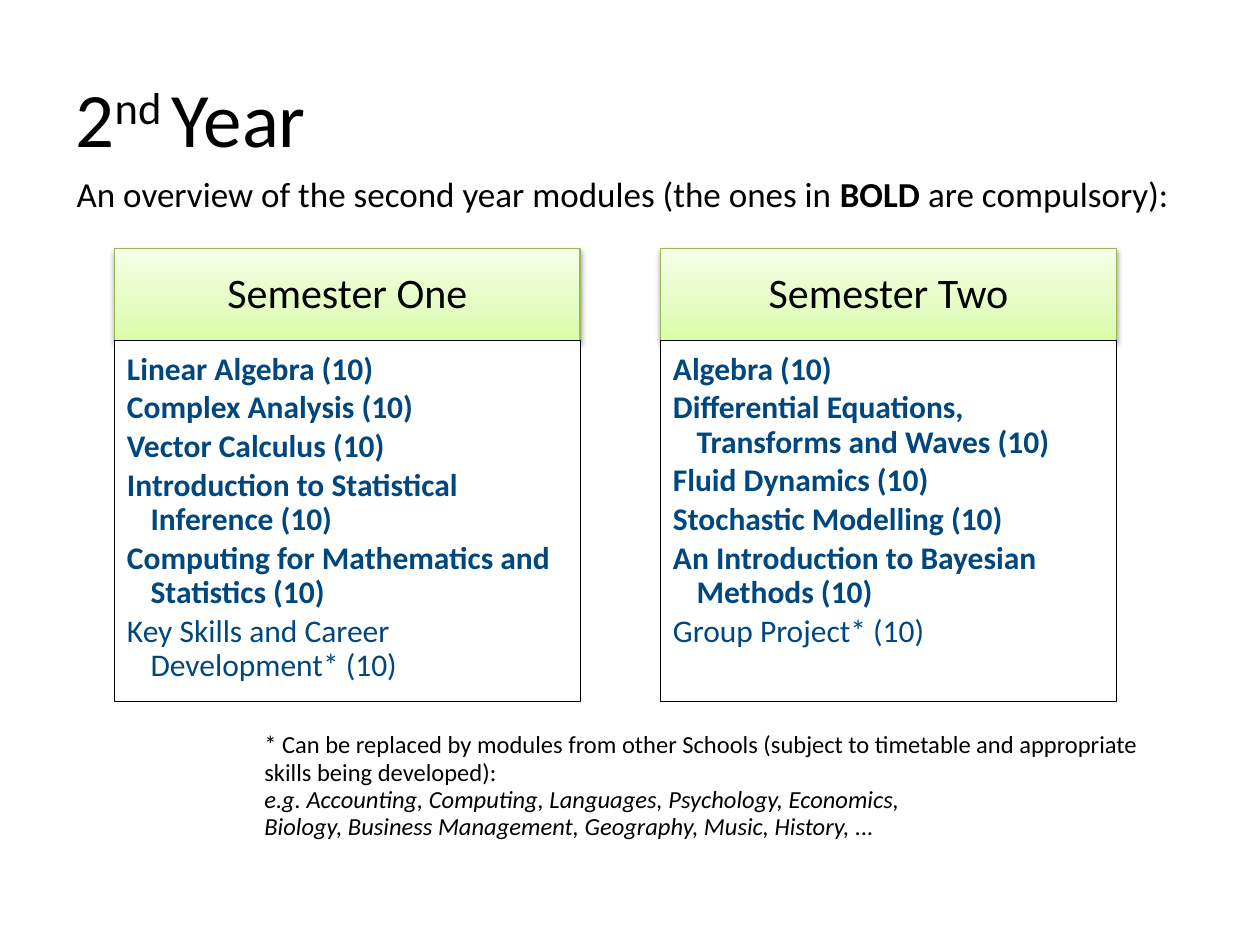
import copy

import pptx
import pptx.dml.color
import pptx.enum.shapes
import pptx.enum.text
import pptx.oxml
import pptx.oxml.ns
import pptx.util

Pt = pptx.util.Pt
RGB = pptx.dml.color.RGBColor.from_string
ALIGN = pptx.enum.text.PP_ALIGN
ANCHOR = pptx.enum.text.MSO_ANCHOR
RECTANGLE = pptx.enum.shapes.MSO_SHAPE.RECTANGLE

THEME = {
    "font": "Calibri",
    "text": "000000", "module": "00477F", "paper": "FFFFFF",
    "header_line": "98B955",
    "header_stops": [(0, "DAFDA7"), (0.35, "E4FCC2"), (1, "F5FFE7")],
    "title_size": 44, "overview_size": 20, "header_size": 24,
    "module_size": 18, "note_size": 14,
}
SHADOW = (
    f'<a:outerShdw {pptx.oxml.ns.nsdecls("a")} blurRad="{Pt(3.1)}" dist="{Pt(1.6)}"'
    ' dir="5400000" rotWithShape="0"><a:srgbClr val="000000"><a:alpha val="38000"/>'
    "</a:srgbClr></a:outerShdw>"
)
SEMESTERS = [
    ("Semester One", 65.5, 266, [
        "Linear Algebra (10)",
        "Complex Analysis (10)",
        "Vector Calculus (10)",
        "Introduction to Statistical Inference (10)",
        "Computing for Mathematics and Statistics (10)",
        "Key Skills and Career Development* (10)",
    ]),
    ("Semester Two", 377.5, 260.5, [
        "Algebra (10)",
        "Differential Equations, Transforms and Waves (10)",
        "Fluid Dynamics (10)",
        "Stochastic Modelling (10)",
        "An Introduction to Bayesian Methods (10)",
        "Group Project* (10)",
    ]),
]
NOTE = [
    ("* Can be replaced by modules from other Schools (subject to timetable "
     "and appropriate skills being developed):", False),
    ("e.g. Accounting, Computing, Languages, Psychology, Economics,", True),
    ("Biology, Business Management, Geography, Music, History, ...", True),
]
HEADER_TOP, HEADER_HEIGHT, LIST_HEIGHT = 142, 52.5, 206


def add_run(paragraph, text, size, color=THEME["text"], **formats):
    run = paragraph.add_run()
    run.text = text
    run.font.color.rgb = RGB(color)
    for name, value in {"name": THEME["font"], "size": Pt(size), **formats}.items():
        setattr(run.font, name, value)
    return run


def format_frame(frame, anchor, insets):
    """Wrap the text, anchor it and set left, top, right and bottom insets."""
    frame.word_wrap = True
    frame.vertical_anchor = anchor
    for side, inset in zip(("left", "top", "right", "bottom"), insets):
        setattr(frame, f"margin_{side}", Pt(inset))


prs = pptx.Presentation()
prs.slide_width, prs.slide_height = Pt(720), Pt(540)
slide = prs.slides.add_slide(prs.slide_layouts[5])
shapes = slide.shapes

title = shapes.title
placement = {"left": 36, "top": 21.6, "width": 648, "height": 90}
for name, value in placement.items():
    setattr(title, name, Pt(value))
format_frame(title.text_frame, ANCHOR.MIDDLE, (7.2, 3.6, 7.2, 3.6))
year = title.text_frame.paragraphs[0]
year.alignment = ALIGN.LEFT
add_run(year, "2", THEME["title_size"])
ordinal = add_run(year, "nd ", THEME["title_size"])
ordinal._r.get_or_add_rPr().set("baseline", "30000")
add_run(year, "Year", THEME["title_size"])

overview = shapes.add_textbox(Pt(36.7), Pt(95), Pt(648), Pt(87)).text_frame
format_frame(overview, ANCHOR.TOP, (7.2, 3.6, 7.2, 3.6))
for text, bold in [
    ("An overview of the second year modules (the ones in", False),
    (" BOLD ", True),
    ("are compulsory):", False),
]:
    add_run(overview.paragraphs[0], text, THEME["overview_size"], bold=bold)

for semester, left, width, modules in SEMESTERS:
    header = shapes.add_shape(
        RECTANGLE, Pt(left), Pt(HEADER_TOP), Pt(width), Pt(HEADER_HEIGHT))
    header.fill.gradient()
    header.fill.gradient_angle = 90
    first_stop = header._element.spPr.find(".//" + pptx.oxml.ns.qn("a:gs"))
    first_stop.addnext(copy.deepcopy(first_stop))
    for stop, (position, color) in zip(header.fill.gradient_stops, THEME["header_stops"]):
        stop.position = position
        stop.color.rgb = RGB(color)
    header.line.color.rgb = RGB(THEME["header_line"])
    header.line.width = Pt(0.75)
    header.shadow.inherit = False
    effects = header._element.spPr.find(pptx.oxml.ns.qn("a:effectLst"))
    effects.append(pptx.oxml.parse_xml(SHADOW))
    format_frame(header.text_frame, ANCHOR.MIDDLE, (13.7, 8, 13.7, 8))
    heading = header.text_frame.paragraphs[0]
    heading.alignment = ALIGN.CENTER
    heading.line_spacing = 0.9
    add_run(heading, semester, THEME["header_size"])

    module_list = shapes.add_shape(
        RECTANGLE, Pt(left), Pt(HEADER_TOP + HEADER_HEIGHT), Pt(width), Pt(LIST_HEIGHT))
    module_list.fill.solid()
    module_list.fill.fore_color.rgb = RGB(THEME["paper"])
    module_list.line.color.rgb = RGB(THEME["text"])
    module_list.line.width = Pt(0.25)
    module_list.shadow.inherit = False
    frame = module_list.text_frame
    format_frame(frame, ANCHOR.TOP, (7.2, 7.2, 10, 11.5))
    for index, module in enumerate(modules):
        entry = frame.add_paragraph() if index else frame.paragraphs[0]
        properties = entry._p.get_or_add_pPr()
        properties.set("marL", str(Pt(13.5)))
        properties.set("indent", str(Pt(-13.5)))
        entry.alignment = ALIGN.LEFT
        entry.line_spacing = 0.9
        entry.space_after = Pt(2.7)
        add_run(entry, module, THEME["module_size"], THEME["module"],
                bold="*" not in module)

note = shapes.add_textbox(Pt(108), Pt(414.7), Pt(561.6), Pt(70.5)).text_frame
format_frame(note, ANCHOR.TOP, (7.2, 3.6, 7.2, 3.6))
for index, (text, italic) in enumerate(NOTE):
    line = note.add_paragraph() if index else note.paragraphs[0]
    line._p.get_or_add_pPr().set("marL", str(Pt(36)))
    line.line_spacing = 0.93
    add_run(line, text, THEME["note_size"], italic=italic)

prs.save("out.pptx")
